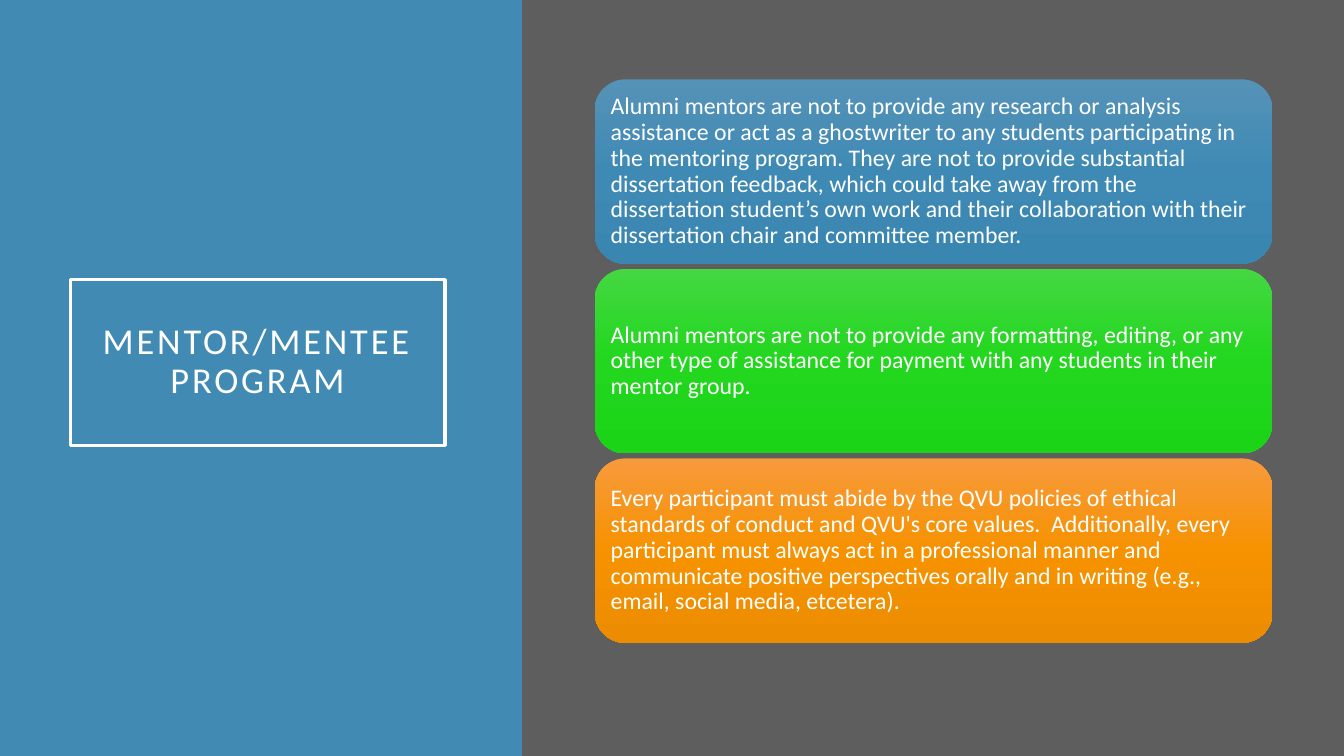
from copy import deepcopy

from pptx import Presentation
from pptx.dml.color import RGBColor
from pptx.enum.shapes import MSO_SHAPE
from pptx.enum.text import MSO_ANCHOR, MSO_AUTO_SIZE, PP_ALIGN
from pptx.oxml.ns import qn
from pptx.util import Inches, Pt

WIDTH, HEIGHT = 13.33, 7.5
SPLIT = 0.39
COLORS = {"blue": "418AB3", "gray": "5E5E5E", "white": "FFFFFF"}
GRADIENTS = {
    "blue": ("5592B7", "3F8AB5", "3986B1"),
    "green": ("44D742", "22D71E", "1BD417"),
    "orange": ("F79A3D", "F69200", "EC8C00"),
}
TITLE = "MENTOR/MENTEE PROGRAM"
RULES = [
    ("blue", "Alumni mentors are not to provide any research or analysis assistance or act as a "
     "ghostwriter to any students participating in the mentoring program. They are not to provide "
     "substantial dissertation feedback, which could take away from the dissertation student’s own "
     "work and their collaboration with their dissertation chair and committee member."),
    ("green", "Alumni mentors are not to provide any formatting, editing, or any other type of "
     "assistance for payment with any students in their mentor group."),
    ("orange", "Every participant must abide by the QVU policies of ethical standards of conduct "
     "and QVU's core values.  Additionally, every participant must always act in a professional "
     "manner and communicate positive perspectives orally and in writing (e.g., email, social "
     "media, etcetera)."),
]


def rgb(name):
    """Return the named colour."""
    return RGBColor.from_string(COLORS[name])


def add_block(slide, kind, box):
    """Add a flat shape without line or shadow, in inches."""
    sp = slide.shapes.add_shape(kind, *map(Inches, box))
    sp.shadow.inherit = False
    sp.line.fill.background()
    return sp


def add_panel(slide, box, color):
    """Add a solid background panel."""
    sp = add_block(slide, MSO_SHAPE.RECTANGLE, box)
    sp.fill.solid()
    sp.fill.fore_color.rgb = rgb(color)
    return sp


def write_text(sp, text, size, align, inset):
    """Write one formatted paragraph, centred vertically in its shape."""
    tf = sp.text_frame
    frame = {f"margin_{side}": Inches(inset) for side in ("left", "top", "right", "bottom")}
    frame.update(word_wrap=True, auto_size=MSO_AUTO_SIZE.NONE, vertical_anchor=MSO_ANCHOR.MIDDLE)
    p = tf.paragraphs[0]
    r = p.add_run()
    r.text = text
    formats = (
        (tf, frame),
        (p, {"alignment": align, "line_spacing": 0.9}),
        (r.font, {"name": "Calibri", "size": Pt(size)}),
    )
    for target, values in formats:
        for name, value in values.items():
            setattr(target, name, value)
    r.font.color.rgb = rgb("white")
    return r


def fill_gradient(sp, stops):
    """Fill a shape from top to bottom with evenly spaced colours."""
    sp.fill.gradient()
    sp.fill.gradient_angle = 270
    stop_list = sp._element.spPr.find(qn("a:gradFill")).find(qn("a:gsLst"))
    while len(stop_list) < len(stops):
        stop_list.append(deepcopy(stop_list[0]))
    for i, (stop, color) in enumerate(zip(sp.fill.gradient_stops, stops)):
        stop.position = i / (len(stops) - 1)
        stop.color.rgb = RGBColor.from_string(color)


def build_title_side(slide, box):
    """Build the blue side with the framed title."""
    left, top, width, height = box
    panel = add_panel(slide, box, "blue")
    title = slide.shapes.title
    panel._element.addnext(title._element)
    frame = {
        "left": left + 0.135 * width,
        "top": top + 0.37 * height,
        "width": 0.717 * width,
        "height": 0.219 * height,
    }
    for name, value in frame.items():
        setattr(title, name, Inches(value))
    title.line.color.rgb = rgb("white")
    title.line.width = Pt(2.5)
    r = write_text(title, TITLE, 26, PP_ALIGN.CENTER, 0.2)
    r.font._element.set("spc", "200")


def build_rules_side(slide, box):
    """Build the gray side with a stack of equal rule cards."""
    left, top, width, height = box
    add_panel(slide, box, "gray")
    card_width, card_height = 0.827 * width, 0.244 * height
    pitch = card_height + 0.0067 * height
    for i, (color, text) in enumerate(RULES):
        card_top = top + 0.105 * height + i * pitch
        card = add_block(slide, MSO_SHAPE.ROUNDED_RECTANGLE,
                         (left + 0.086 * width, card_top, card_width, card_height))
        fill_gradient(card, GRADIENTS[color])
        write_text(card, text, 17, PP_ALIGN.LEFT, 0.07)


def main():
    """Build and save the slide."""
    prs = Presentation()
    prs.slide_width, prs.slide_height = Inches(WIDTH), Inches(HEIGHT)
    slide = prs.slides.add_slide(prs.slide_layouts[5])
    slide.background.fill.solid()
    slide.background.fill.fore_color.rgb = rgb("gray")
    split = SPLIT * WIDTH
    build_title_side(slide, (0, 0, 0.996 * split, HEIGHT))
    build_rules_side(slide, (split, 0, WIDTH - split, HEIGHT))
    prs.save("out.pptx")


if __name__ == "__main__":
    main()
